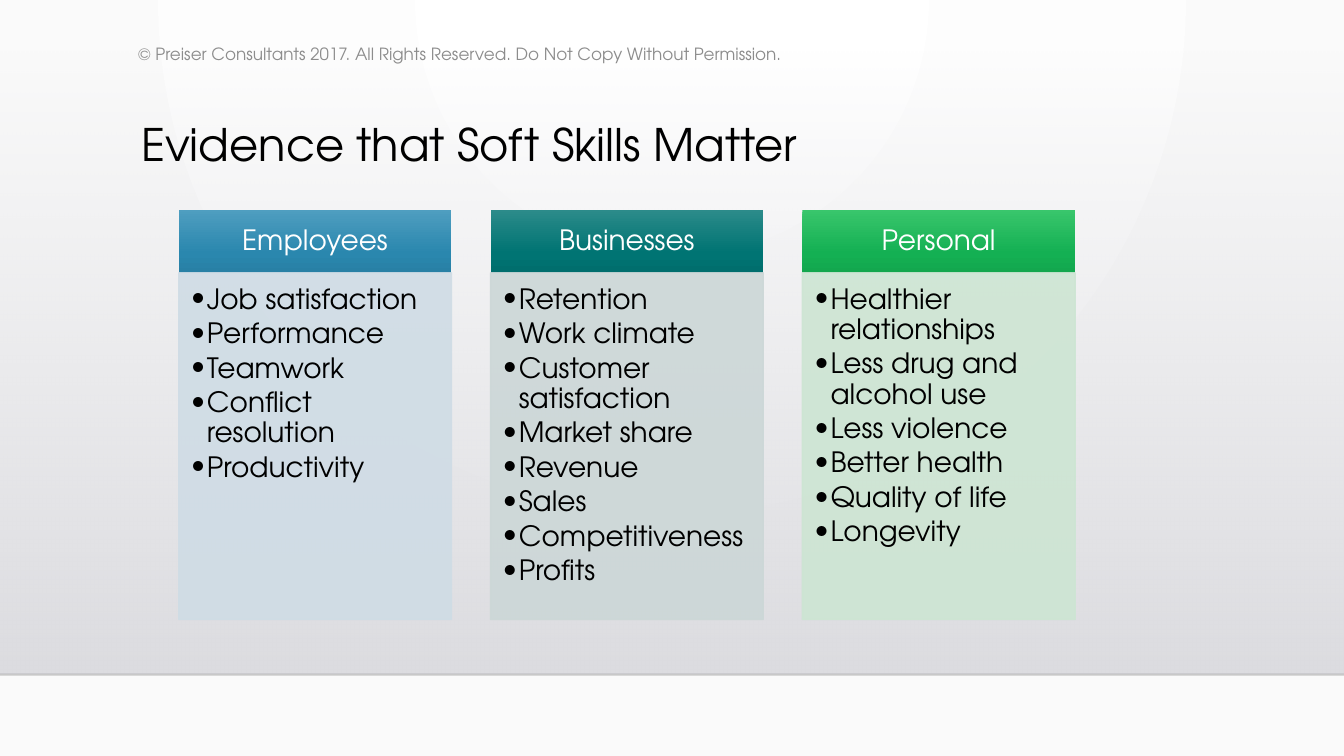
from dataclasses import dataclass

from lxml.etree import SubElement
from pptx import Presentation
from pptx.dml.color import RGBColor
from pptx.enum.shapes import MSO_CONNECTOR, MSO_SHAPE
from pptx.enum.text import MSO_ANCHOR, MSO_AUTO_SIZE, PP_ALIGN
from pptx.oxml import parse_xml
from pptx.oxml.ns import nsdecls, qn
from pptx.util import Inches, Pt

FONT = "TeX Gyre Adventor"
COLORS = {
    "white": "FFFFFF",
    "black": "000000",
    "grey": "8C8C8C",
    "edge": "FAFAFA",
    "haze_top": "DCDCE0",
    "haze_bottom": "DEDEE2",
    "floor": "000001",
}
LINEAR = '<a:lin ang="5400000" scaled="0"/>'
RADIAL = '<a:path path="circle"><a:fillToRect l="43000" r="43000" b="100000"/></a:path>'
SLIDE_W = 10
SLIDE_H = SLIDE_W * 9 / 16
LEFT, TOP, PITCH, WIDTH = 1.33, 1.56, 2.32, 2.03
HEAD_H, BODY_H = 0.47, 2.58


@dataclass
class Stop:
    pos: int
    color: str
    alpha: int = 100


@dataclass
class Column:
    title: str
    shades: tuple[str, str, str]
    tint: str
    items: list[str]


COLUMNS = [
    Column("Employees", ("4F9EC0", "2A87AE", "2880A5"), "CFDCE5",
           ["Job satisfaction", "Performance", "Teamwork",
            "Conflict resolution", "Productivity"]),
    Column("Businesses", ("2C8B8A", "007473", "006E6D"), "CCD7D7",
           ["Retention", "Work climate", "Customer satisfaction", "Market share",
            "Revenue", "Sales", "Competitiveness", "Profits"]),
    Column("Personal", ("39C66C", "14B053", "13A74E"), "CDE5D3",
           ["Healthier relationships", "Less drug and alcohol use", "Less violence",
            "Better health", "Quality of life", "Longevity"]),
]


def set_gradient(fill, parent, stops: list[Stop], direction: str) -> None:
    fill.solid()
    fill.fore_color.rgb = RGBColor.from_string(stops[0].color)
    gs = "".join(
        f'<a:gs pos="{st.pos * 1000}"><a:srgbClr val="{st.color}">'
        f'<a:alpha val="{st.alpha * 1000}"/></a:srgbClr></a:gs>'
        for st in stops
    )
    grad = parse_xml(f'<a:gradFill {nsdecls("a")} rotWithShape="1">'
                     f'<a:gsLst>{gs}</a:gsLst>{direction}</a:gradFill>')
    parent.replace(parent.find(qn("a:solidFill")), grad)


def set_alpha(parent, alpha: int) -> None:
    color = parent.find(f'{qn("a:solidFill")}/{qn("a:srgbClr")}')
    SubElement(color, qn("a:alpha"), val=str(alpha * 1000))


def add_rect(s, x: float, y: float, w: float, h: float):
    sp = s.shapes.add_shape(MSO_SHAPE.RECTANGLE, Inches(x), Inches(y),
                            Inches(w), Inches(h))
    sp.shadow.inherit = False
    sp.line.fill.background()
    return sp


def set_insets(tf, left: float, top: float, right: float, bottom: float) -> None:
    tf.word_wrap = True
    tf.margin_left, tf.margin_top = Inches(left), Inches(top)
    tf.margin_right, tf.margin_bottom = Inches(right), Inches(bottom)


def add_run(p, text: str, size: float, color: str) -> None:
    r = p.add_run()
    r.text = text
    r.font.name = FONT
    r.font.size = Pt(size)
    r.font.color.rgb = RGBColor.from_string(color)


def add_bullet(p, text: str) -> None:
    pPr = p._p.get_or_add_pPr()
    pPr.set("marL", str(Inches(0.12)))
    pPr.set("indent", str(Inches(-0.12)))
    SubElement(pPr, qn("a:buFont"), typeface=FONT)
    SubElement(pPr, qn("a:buChar"), char="•")
    p.alignment = PP_ALIGN.LEFT
    p.line_spacing = 0.9
    p.space_after = Pt(2.25)
    add_run(p, text, 15, COLORS["black"])


def add_column(s, col: Column, x: float) -> None:
    head = add_rect(s, x, TOP, WIDTH, HEAD_H)
    stops = [Stop(pos, shade) for pos, shade in zip((0, 69, 100), col.shades)]
    set_gradient(head.fill, head._element.spPr, stops, LINEAR)
    tf = head.text_frame
    set_insets(tf, 0.12, 0.07, 0.12, 0.07)
    tf.vertical_anchor = MSO_ANCHOR.MIDDLE
    p = tf.paragraphs[0]
    p.alignment = PP_ALIGN.CENTER
    p.line_spacing = 0.9
    add_run(p, col.title, 15, COLORS["white"])

    body = add_rect(s, x, TOP + HEAD_H, WIDTH, BODY_H)
    spPr = body._element.spPr
    for fill in (body.fill, body.line.fill):
        fill.solid()
        fill.fore_color.rgb = RGBColor.from_string(col.tint)
    body.line.width = Pt(0.75)
    set_alpha(spPr, 90)
    set_alpha(spPr.find(qn("a:ln")), 90)
    tf = body.text_frame
    set_insets(tf, 0.09, 0.09, 0.12, 0.13)
    tf.vertical_anchor = MSO_ANCHOR.TOP
    for i, item in enumerate(col.items):
        add_bullet(tf.add_paragraph() if i else tf.paragraphs[0], item)


def add_backdrop(s) -> None:
    fill = s.background.fill
    fill.solid()
    set_gradient(fill, s._element.find(f'.//{qn("p:bgPr")}'),
                 [Stop(0, COLORS["white"]), Stop(100, COLORS["edge"])], RADIAL)
    haze = add_rect(s, 0, 0.38, SLIDE_W, 4.63)
    set_gradient(haze.fill, haze._element.spPr,
                 [Stop(0, COLORS["haze_top"], 0), Stop(100, COLORS["haze_bottom"])],
                 LINEAR)
    floor = s.shapes.add_connector(MSO_CONNECTOR.STRAIGHT, Inches(0), Inches(5.02),
                                   Inches(SLIDE_W), Inches(5.02))
    floor.line.width = Pt(1)
    floor.line.color.rgb = RGBColor.from_string(COLORS["floor"])
    spPr = floor._element.spPr
    set_alpha(spPr.find(qn("a:ln")), 20)
    SubElement(spPr, qn("a:effectLst"))


def add_title(s, text: str) -> None:
    title = s.shapes.title
    title.left, title.top = Inches(0.95), Inches(0.86)
    title.width, title.height = Inches(7.88), Inches(0.69)
    s.shapes._spTree.append(title._element)
    tf = title.text_frame
    tf.auto_size = MSO_AUTO_SIZE.NONE
    tf.vertical_anchor = MSO_ANCHOR.TOP
    p = tf.paragraphs[0]
    p.alignment = PP_ALIGN.LEFT
    p.line_spacing = 0.9
    add_run(p, text, 24, COLORS["black"])


def add_copyright(s, text: str) -> None:
    box = s.shapes.add_textbox(Inches(0.93), Inches(0.27), Inches(5.11), Inches(0.26))
    tf = box.text_frame
    tf.word_wrap = True
    tf.vertical_anchor = MSO_ANCHOR.MIDDLE
    add_run(tf.paragraphs[0], text, 9, COLORS["grey"])


def main() -> None:
    prs = Presentation()
    prs.slide_width, prs.slide_height = Inches(SLIDE_W), Inches(SLIDE_H)
    s = prs.slides.add_slide(prs.slide_layouts[5])
    add_backdrop(s)
    for i, col in enumerate(COLUMNS):
        add_column(s, col, LEFT + i * PITCH)
    add_title(s, "Evidence that Soft Skills Matter")
    add_copyright(s, "© Preiser Consultants 2017. All Rights Reserved. "
                     "Do Not Copy Without Permission.")
    prs.save("out.pptx")


if __name__ == "__main__":
    main()
